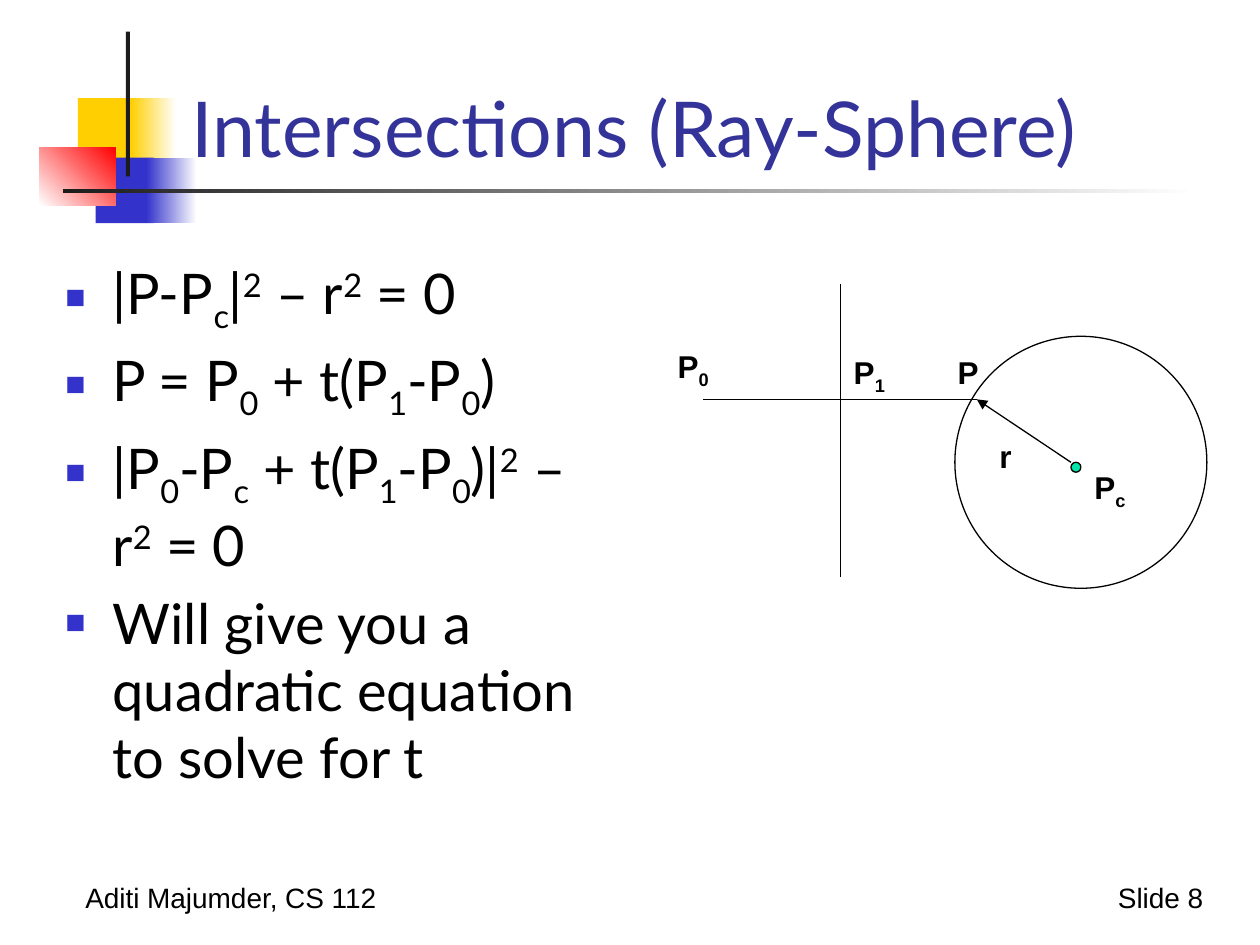
"""Build the ray-sphere intersection slide."""
from lxml.etree import SubElement
from pptx import Presentation
from pptx.dml.color import RGBColor
from pptx.enum.shapes import MSO_CONNECTOR, MSO_SHAPE
from pptx.enum.text import MSO_ANCHOR, PP_ALIGN
from pptx.oxml.ns import qn
from pptx.util import Cm, Pt

BASELINES = {"_": "-25000", "^": "30000"}


def add_text(place, lines, look, color, align=PP_ALIGN.LEFT, anchor=MSO_ANCHOR.TOP, wrap=True):
    """Add lines whose pieces are split by ~, with _ for subscript and ^ for superscript."""
    box = page.shapes.add_textbox(*map(Cm, place))
    for name, value in {"word_wrap": wrap, "vertical_anchor": anchor}.items():
        setattr(box.text_frame, name, value)
    for number, line in enumerate(lines):
        para = box.text_frame.add_paragraph() if number else box.text_frame.paragraphs[0]
        para.alignment = align
        for piece in line.split("~"):
            span = para.add_run()
            span.text = piece.lstrip("_^")
            span.font.color.rgb = RGBColor.from_string(color)
            for name, value in look.items():
                setattr(span.font, name, value)
            if piece[0] in BASELINES:
                span.font._element.set("baseline", BASELINES[piece[0]])
    return box


def add_shape(kind, place, colors, angle=0, outline=None):
    """Add a shape with no fill, a solid fill or a two-colour gradient."""
    shape = page.shapes.add_shape(kind, *map(Cm, place))
    shape.shadow.inherit = False
    if len(colors) == 2:
        shape.fill.gradient()
        shape.fill.gradient_angle = angle
        for stop, color, position in zip(shape.fill.gradient_stops, colors, (0, 1)):
            stop.color.rgb = RGBColor.from_string(color)
            stop.position = position
    elif colors:
        shape.fill.solid()
        shape.fill.fore_color.rgb = RGBColor.from_string(colors[0])
    else:
        shape.fill.background()
    if outline:
        shape.line.color.rgb = RGBColor.from_string(outline)
        shape.line.width = Pt(0.75)
    else:
        shape.line.fill.background()


deck = Presentation()
deck.slide_width, deck.slide_height = Cm(25.4), Cm(19.05)
page = deck.slides.add_slide(deck.slide_layouts[6])

for place, colors, angle in [
    ((1.57, 1.98, 1.22, 1.32), ["FFCF01"], 0),
    ((2.64, 1.98, 0.91, 1.32), ["FFCF01", "FFFFFF"], 0),
    ((1.93, 3.18, 1.17, 1.32), ["3333CC"], 0),
    ((2.95, 3.18, 1.02, 1.32), ["3333CC", "FFFFFF"], 0),
    ((0.79, 2.97, 1.55, 1.17), ["FFFFFF", "FF0000"], 45),
    ((2.54, 0.64, 0.08, 2.92), ["1C1C1C"], 0),
    ((1.27, 3.81, 22.86, 0.08), ["1C1C1C", "FFFFFF"], 0),
]:
    add_shape(MSO_SHAPE.RECTANGLE, place, colors, angle)

footer_look = {"name": "Arial", "size": Pt(16)}
add_text((1.47, 17.63, 6.48, 0.94), ["Aditi Majumder, CS 112"], footer_look, "000000", wrap=False)
add_text((21.89, 17.63, 2.62, 0.94), ["Slide 8"], footer_look, "000000", PP_ALIGN.RIGHT, wrap=False)
add_text((3.61, 0.64, 21.23, 2.97), ["Intersections (Ray-Sphere)"],
         {"name": "Lato", "size": Pt(44)}, "333399", anchor=MSO_ANCHOR.BOTTOM)

equations = [
    "|P-P~_c~|~^2~ – r~^2~ = 0",
    "P = P~_0~ + t(P~_1~-P~_0~)",
    "|P~_0~-P~_c~ + t(P~_1~-P~_0~)|~^2~ – r~^2~ = 0",
    "Will give you a quadratic equation to solve for t",
]
body = add_text((1.07, 5.08, 11, 12.27), equations, {"name": "Lato", "size": Pt(32)}, "000000")
for para in body.text_frame.paragraphs:
    properties = para._p.get_or_add_pPr()
    properties.set("marL", str(Cm(0.95)))
    properties.set("indent", str(Cm(-0.95)))
    space = SubElement(properties, qn("a:spcBef"))
    SubElement(space, qn("a:spcPct"), val="20000")
    bullet_color = SubElement(properties, qn("a:buClr"))
    SubElement(bullet_color, qn("a:srgbClr"), val="3333CC")
    SubElement(properties, qn("a:buSzPct"), val="60000")
    SubElement(properties, qn("a:buFont"), typeface="Arial")
    SubElement(properties, qn("a:buChar"), char="■")

add_shape(MSO_SHAPE.OVAL, (19.25, 6.78, 5.08, 5.08), [], outline="000000")
add_shape(MSO_SHAPE.OVAL, (21.59, 9.32, 0.2, 0.2), ["00E4A8"], outline="000000")

for ends, has_arrow in [
    ((14.17, 8.05, 19.69, 8.05), False),
    ((16.94, 5.72, 16.94, 11.63), False),
    ((21.59, 9.32, 19.69, 8.05), True),
]:
    connector = page.shapes.add_connector(MSO_CONNECTOR.STRAIGHT, *map(Cm, ends))
    connector.line.color.rgb = RGBColor.from_string("000000")
    connector.line.width = Pt(0.75)
    if has_arrow:
        SubElement(connector.line._get_or_add_ln(), qn("a:tailEnd"), type="triangle")
    SubElement(connector._element.spPr, qn("a:effectLst"))

for left, top, width, label in [
    (13.39, 6.88, 1.17, "P~_0"),
    (16.94, 6.99, 1.17, "P~_1"),
    (19.05, 6.99, 0.94, "P"),
    (21.79, 9.32, 1.17, "P~_c"),
    (19.89, 8.69, 0.76, "r"),
]:
    add_text((left, top, width, 1.02), [label], {"name": "Arial", "size": Pt(18), "bold": True},
             "000000", PP_ALIGN.CENTER, wrap=False)

deck.save("out.pptx")
